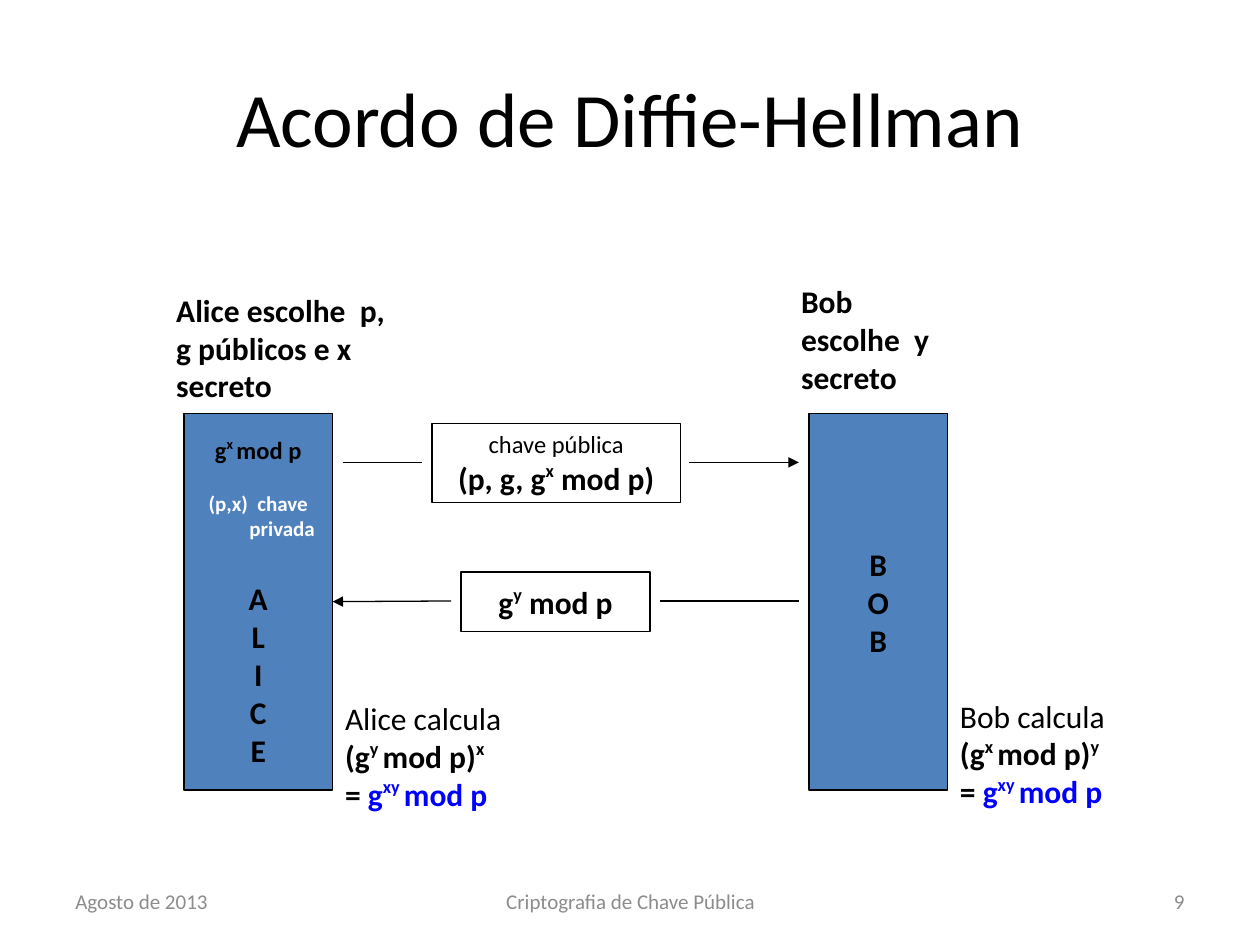
from pptx import Presentation
from pptx.dml.color import RGBColor
from pptx.enum.shapes import MSO_CONNECTOR as Link, MSO_SHAPE as Kind
from pptx.enum.text import MSO_ANCHOR as Anchor, PP_ALIGN as Align
from pptx.oxml.ns import qn
from pptx.util import Inches, Pt
from lxml import etree

BLACK = RGBColor(0, 0, 0)
WHITE = RGBColor(255, 255, 255)
GREY = RGBColor(0x8C, 0x8C, 0x8C)
STEEL = RGBColor(0x4F, 0x81, 0xBD)
BLUE = RGBColor(0, 0, 255)


def add_runs(para, text):
    """Write text where ^...^ is raised and all after | is blue."""
    for i, part in enumerate(text.split("|")):
        for j, piece in enumerate(part.split("^")):
            if not piece:
                continue
            run = para.add_run()
            run.text = piece
            if i:
                run.font.color.rgb = BLUE
            if j % 2:
                run._r.get_or_add_rPr().set("baseline", "40000")


def add_line(frame, text, size=18, bold=True, color=BLACK,
             align=Align.LEFT, after=0, indent=0):
    para = frame.paragraphs[0]
    if para.runs:
        para = frame.add_paragraph()
    para.alignment = align
    para.space_after = Pt(after)
    if indent:
        para._p.get_or_add_pPr().set("marL", str(Inches(indent)))
    font = para.font
    font.name, font.size, font.bold = "Calibri", Pt(size), bold
    font.color.rgb = color
    add_runs(para, text)


def add_text(slide, x, y, w, h, anchor=Anchor.TOP):
    frame = slide.shapes.add_textbox(
        Inches(x), Inches(y), Inches(w), Inches(h)).text_frame
    frame.word_wrap = True
    frame.vertical_anchor = anchor
    return frame


def add_box(slide, x, y, w, h, fill):
    box = slide.shapes.add_shape(
        Kind.RECTANGLE, Inches(x), Inches(y), Inches(w), Inches(h))
    box.shadow.inherit = False
    box.fill.solid()
    box.fill.fore_color.rgb = fill
    box.line.color.rgb = BLACK
    box.line.width = Pt(0.75)
    box.text_frame.word_wrap = True
    box.text_frame.vertical_anchor = Anchor.MIDDLE
    return box


def add_link(slide, x1, x2, y, arrow=False):
    link = slide.shapes.add_connector(
        Link.STRAIGHT, Inches(x1), Inches(y), Inches(x2), Inches(y))
    link.line.color.rgb = BLACK
    link.line.width = Pt(0.75)
    if arrow:
        etree.SubElement(link.line._get_or_add_ln(), qn("a:tailEnd"),
                         type="triangle")
    etree.SubElement(link._element.spPr, qn("a:effectLst"))
    return link


def add_footer(slide):
    for x, w, text, align in (
            (0.5, 2.33, "Agosto de 2013", Align.LEFT),
            (3.42, 3.17, "Criptografia de Chave Pública", Align.CENTER),
            (7.17, 2.33, "9", Align.RIGHT)):
        frame = add_text(slide, x, 6.95, w, 0.4, Anchor.MIDDLE)
        add_line(frame, text, 12, False, GREY, align)


def add_people(slide):
    mid = Align.CENTER
    alice = add_box(slide, 1.46, 3.28, 1.18, 2.99, STEEL)
    frame = alice.text_frame
    add_line(frame, "g^x ^mod p", 14, align=mid, after=15)
    add_line(frame, "(p,x)  chave", 12, color=WHITE, align=mid)
    add_line(frame, "privada", 12, color=WHITE, align=mid,
             after=22, indent=0.38)
    bob = add_box(slide, 6.42, 3.28, 1.1, 2.99, STEEL)
    for box, name in ((alice, "ALICE"), (bob, "BOB")):
        for letter in name:
            add_line(box.text_frame, letter, align=mid)
    return alice


def add_notes(slide):
    for x, y, w, lines in (
            (1.3, 2.26, 1.89, ["Alice escolhe  p, g públicos e x secreto"]),
            (6.26, 2.19, 1.65, ["Bob", "escolhe  y", "secreto"])):
        frame = add_text(slide, x, y, w, 1)
        for line in lines:
            add_line(frame, line)
    for x, y, w, name, base, power in (
            (2.64, 5.5, 1.73, "Alice", "y", "x"),
            (7.52, 5.48, 2.05, "Bob", "x", "y")):
        frame = add_text(slide, x, y, w, 1)
        add_line(frame, f"{name} calcula", bold=False)
        add_line(frame, f"(g^{base} ^mod p)^{power}^")
        add_line(frame, "= |g^xy ^mod p")


def add_exchange(slide, alice):
    mid = Align.CENTER
    frame = add_box(slide, 3.43, 3.36, 1.97, 0.63, WHITE).text_frame
    add_line(frame, "chave pública", 14, False, align=mid)
    add_line(frame, "(p, g, g^x^ mod p)", align=mid)
    frame = add_box(slide, 3.66, 4.54, 1.5, 0.47, WHITE).text_frame
    add_line(frame, "g^y^ mod p", align=mid)
    add_link(slide, 2.72, 3.35, 3.67)
    add_link(slide, 5.47, 6.34, 3.67, arrow=True)
    add_link(slide, 5.24, 6.34, 4.77)
    add_link(slide, 3.58, 2.64, 4.77, arrow=True).end_connect(alice, 3)


def main():
    deck = Presentation()
    deck.slide_width, deck.slide_height = Inches(10), Inches(7.5)
    slide = deck.slides.add_slide(deck.slide_layouts[6])
    add_footer(slide)
    title = add_text(slide, 0.5, 0.3, 9, 1.25, Anchor.MIDDLE)
    add_line(title, "Acordo de Diffie-Hellman", 44, False, align=Align.CENTER)
    alice = add_people(slide)
    add_notes(slide)
    add_exchange(slide, alice)
    deck.save("out.pptx")


if __name__ == "__main__":
    main()
